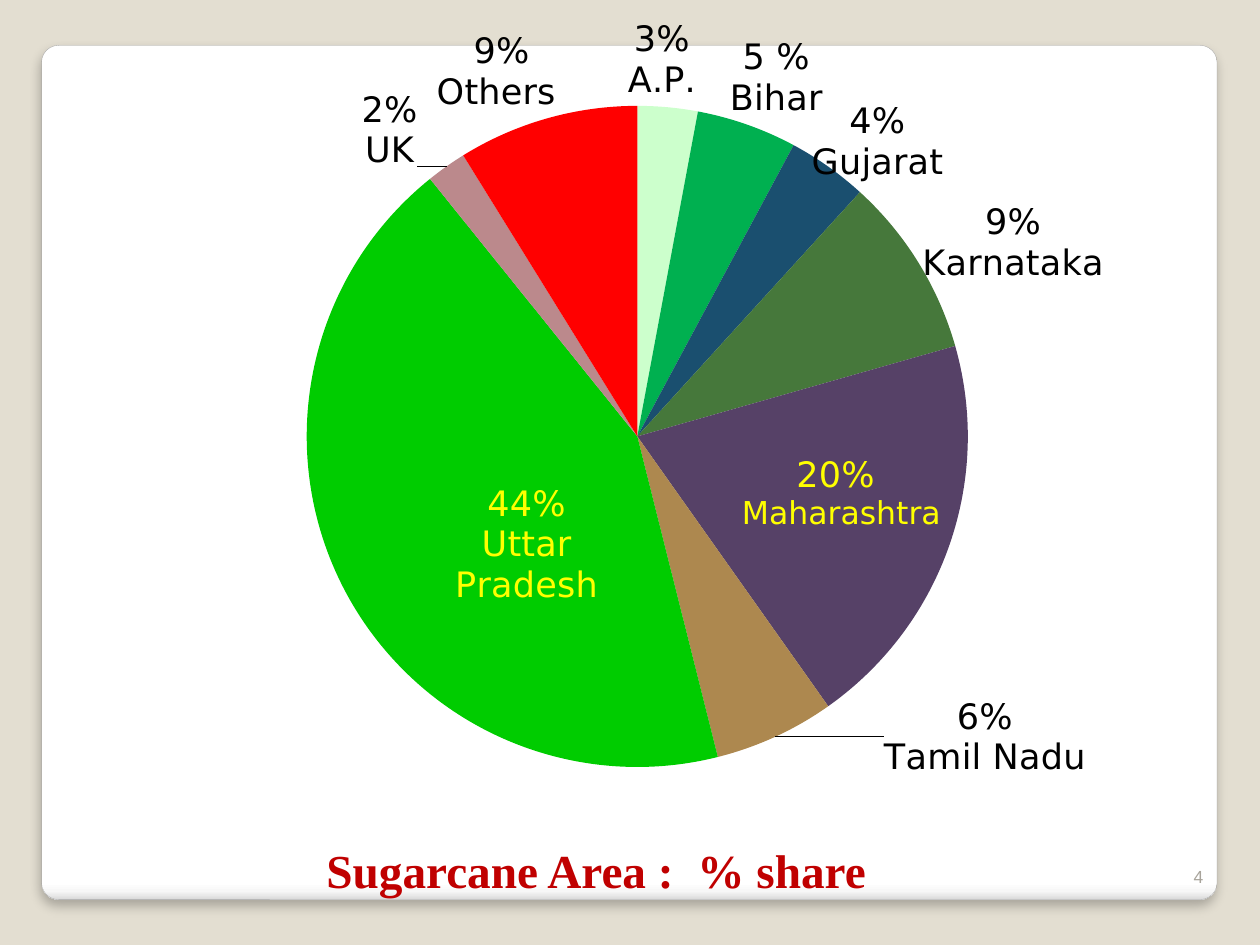
from dataclasses import dataclass

from lxml.etree import SubElement
from pptx import Presentation
from pptx.chart.data import CategoryChartData
from pptx.dml.color import RGBColor
from pptx.enum.chart import XL_CHART_TYPE, XL_LABEL_POSITION
from pptx.enum.shapes import MSO_SHAPE
from pptx.enum.text import MSO_ANCHOR, MSO_AUTO_SIZE, PP_ALIGN
from pptx.oxml import parse_xml
from pptx.oxml.ns import nsdecls, qn
from pptx.util import Inches, Pt


@dataclass(frozen=True)
class Theme:
    background: str = "E3DED1"
    border: str = "A4A4A4"
    caption: str = "C00000"
    page_number: str = "A8A49B"
    label: str = "000000"
    label_inside: str = "FFFF00"
    label_font: str = "DejaVu Sans"
    caption_font: str = "Times New Roman"
    page_font: str = "Arial"
    caption_size: int = 27
    label_size: int = 20
    small_label_size: int = 18
    page_size: int = 10


@dataclass(frozen=True)
class Box:
    left: float
    top: float
    width: float
    height: float

    def inches(self):
        return [Inches(v) for v in (self.left, self.top, self.width, self.height)]


@dataclass(frozen=True)
class Slice:
    """A state's share; dx and dy move its label, in inches."""
    value: int
    share: str
    state: str
    color: str
    dx: float
    dy: float
    inside: bool = False
    state_size: int = Theme.label_size


THEME = Theme()
CARD = Box(0.33, 0.36, 9.33, 6.78)
CHART = Box(0.96, 0, 8.72, 6.78)
PIE = Box(2.43, 0.84, 5.25, 5.25)
SLICES = [
    Slice(3, "3%", "A.P.", "CCFFCC", -0.32, 0),
    Slice(5, "5 %", "Bihar", "00B050", -0.16, 0.01),
    Slice(4, "4%", "Gujarat", "1A4F6F", -0.17, 0.17),
    Slice(9, "9%", "Karnataka", "46783B", -0.02, 0.2),
    Slice(20, "20% ", "Maharashtra", "564167", 0.38, 0.02, True, THEME.small_label_size),
    Slice(6, "6%", "Tamil Nadu", "AD884F", 0.84, -0.37),
    Slice(44, "44%", "Uttar\nPradesh", "00CC00", 0.3, 0.27, True),
    Slice(2, "2%", "UK", "BB898C", -0.19, 0.08),
    Slice(9, " 9%", "Others", "FF0000", 0.09, 0.01),
]


def write(p, text: str, *, font: str, size: float, color: str, bold=False, align=None):
    r = p.add_run()
    r.text = text
    r.font.name, r.font.size, r.font.bold = font, Pt(size), bold
    r.font.color.rgb = RGBColor.from_string(color)
    p.alignment = align


def place(sp, box: Box, anchor):
    sp.left, sp.top, sp.width, sp.height = box.inches()
    tf = sp.text_frame
    tf.word_wrap, tf.vertical_anchor = True, anchor
    tf.auto_size = MSO_AUTO_SIZE.NONE
    tf.margin_left = tf.margin_right = Inches(0.08)
    tf.margin_top = tf.margin_bottom = Inches(0.04)
    return tf


def add_card(slide):
    sp = slide.shapes.add_shape(MSO_SHAPE.ROUNDED_RECTANGLE, *CARD.inches())
    sp.adjustments[0] = 0.02
    sp.line.color.rgb = RGBColor.from_string(THEME.border)
    sp.line.width = Pt(0.16)
    stops = [(0, "FFFFFF"), (98, "FFFFFF"), (99, "F7F7F7"), (100, "DADADA")]
    gs = "".join(f'<a:gs pos="{pos * 1000}"><a:srgbClr val="{color}"/></a:gs>'
                 for pos, color in stops)
    ln = sp.line._get_or_add_ln()
    ln.addprevious(parse_xml(
        f'<a:gradFill {nsdecls("a")}><a:gsLst>{gs}</a:gsLst>'
        '<a:lin ang="5400000" scaled="0"/></a:gradFill>'))
    ln.addnext(parse_xml(
        f'<a:effectLst {nsdecls("a")}><a:outerShdw blurRad="{Pt(6)}" dist="{Pt(4)}" '
        'dir="5400000" algn="t" rotWithShape="0"><a:srgbClr val="000000">'
        '<a:alpha val="25000"/></a:srgbClr></a:outerShdw></a:effectLst>'))


def manual_layout(**values):
    layout = parse_xml(f'<c:layout {nsdecls("c")}><c:manualLayout/></c:layout>')
    for name, value in values.items():
        SubElement(layout[0], qn(f"c:{name}")).set("val", str(value))
    return layout


def format_slice(point, item: Slice):
    point.format.fill.solid()
    point.format.fill.fore_color.rgb = RGBColor.from_string(item.color)
    point.format.line.fill.background()
    label = point.data_label
    tf = label.text_frame
    color = THEME.label_inside if item.inside else THEME.label
    write(tf.paragraphs[0], item.share, font=THEME.label_font,
          size=THEME.label_size, color=color)
    for line in item.state.split("\n"):
        write(tf.add_paragraph(), line, font=THEME.label_font,
              size=item.state_size, color=color)
    label.position = (XL_LABEL_POSITION.CENTER if item.inside
                      else XL_LABEL_POSITION.OUTSIDE_END)
    label._dLbl.find(qn("c:idx")).addnext(manual_layout(
        x=round(item.dx / CHART.width, 3), y=round(item.dy / CHART.height, 3)))


def add_pie(slide):
    data = CategoryChartData(number_format="0")
    data.categories = [str(i) for i in range(1, len(SLICES) + 1)]
    data.add_series("Series 1", [item.value for item in SLICES])
    chart = slide.shapes.add_chart(XL_CHART_TYPE.PIE, *CHART.inches(), data).chart
    chart.has_title = chart.has_legend = False
    chart.font.name, chart.font.size = THEME.label_font, Pt(THEME.label_size)
    plot = chart.plots[0]
    plot.vary_by_categories = True
    series = plot.series[0]
    series.data_labels.show_value = True
    for i, item in enumerate(SLICES):
        format_slice(series.points[i], item)
    plot_area = chart._chartSpace.chart.plotArea
    for old in plot_area.findall(qn("c:layout")):
        plot_area.remove(old)
    plot_area.insert(0, manual_layout(
        layoutTarget="inner", xMode="edge", yMode="edge",
        x=round((PIE.left - CHART.left) / CHART.width, 3),
        y=round((PIE.top - CHART.top) / CHART.height, 3),
        w=round(PIE.width / CHART.width, 3),
        h=round(PIE.height / CHART.height, 3)))


def main():
    prs = Presentation()
    prs.slide_width, prs.slide_height = Inches(10), Inches(7.5)
    slide = prs.slides.add_slide(prs.slide_layouts[5])
    slide.background.fill.solid()
    slide.background.fill.fore_color.rgb = RGBColor.from_string(THEME.background)

    add_card(slide)
    number_box = Box(9.13, 6.68, 0.5, 0.4)
    tf = place(slide.shapes.add_textbox(*number_box.inches()), number_box, MSO_ANCHOR.BOTTOM)
    write(tf.paragraphs[0], "4", font=THEME.page_font, size=THEME.page_size,
          color=THEME.page_number, align=PP_ALIGN.RIGHT)
    add_pie(slide)

    title = slide.shapes.title
    tf = place(title, Box(2.44, 6.64, 4.55, 0.53), MSO_ANCHOR.TOP)
    tf.margin_left, tf.margin_right = Inches(0.15), 0
    write(tf.paragraphs[0], "Sugarcane Area :  % share", font=THEME.caption_font,
          size=THEME.caption_size, color=THEME.caption, bold=True, align=PP_ALIGN.LEFT)
    slide.shapes._spTree.append(title._element)  # bring to front
    prs.save("out.pptx")


if __name__ == "__main__":
    main()
